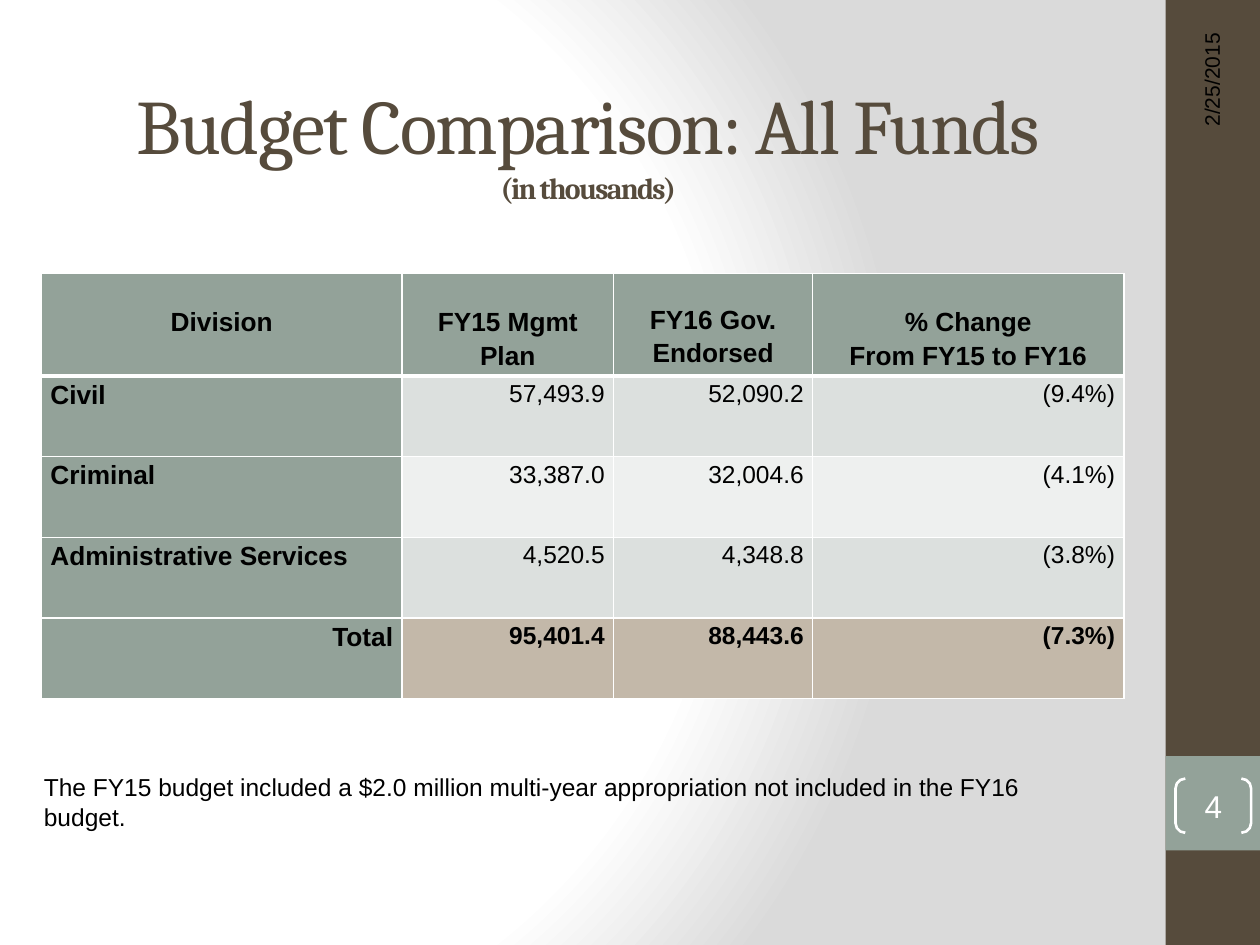
from lxml import etree
from pptx import Presentation
from pptx import util as u
from pptx.dml.color import RGBColor
from pptx.enum import shapes, text
from pptx.oxml import ns

COLORS = {
    "brown": "564B3C", "sage": "93A299", "white": "FFFFFF", "black": "000000",
    "grey": "DADADA", "band": "DCE0DE", "light": "EEF0EF", "tan": "C3B8A9",
}
LEFT, CENTER, RIGHT = text.PP_ALIGN.LEFT, text.PP_ALIGN.CENTER, text.PP_ALIGN.RIGHT
MIDDLE = text.MSO_ANCHOR.MIDDLE


def rgb(name):
    return RGBColor.from_string(COLORS[name])


def sub(parent, tag, **attrs):
    return etree.SubElement(parent, ns.qn(tag), {k: str(v) for k, v in attrs.items()})


def add_run(p, content, size=14, font="Arial", color="black", bold=False, spacing=None):
    r = p.add_run()
    r.text = content
    f = r.font
    f.size, f.name, f.bold = u.Pt(size), font, bold
    f.color.rgb = rgb(color)
    if spacing is not None:
        r._r.get_or_add_rPr().set("spc", str(spacing * 100))


def set_text(tf, content, align=LEFT, line=None, **fmt):
    """Write one paragraph for each line of content."""
    for i, words in enumerate(content.split("\n")):
        p = tf.paragraphs[0] if i == 0 else tf.add_paragraph()
        p.alignment = align
        if line:
            p.line_spacing = line
        add_run(p, words, **fmt)


def set_borders(cell, **widths):
    """Draw white cell borders; widths are points keyed by L, R, T, B."""
    pr = cell._tc.get_or_add_tcPr()
    for i, side in enumerate("LRTB"):
        ln = sub(pr, f"a:ln{side}", w=u.Pt(widths.get(side, 1)))
        sub(sub(ln, "a:solidFill"), "a:srgbClr", val=COLORS["white"])
        pr.insert(i, ln)


class SlideBuilder:
    def __init__(self, prs):
        self.s = prs.slides.add_slide(prs.slide_layouts[6])

    def background(self, stops, focus):
        """Radial gradient; stops are (percent, colour), focus gives edge percents."""
        self.s.background.fill.gradient()
        grad = self.s._element.find(".//" + ns.qn("a:gradFill"))
        for child in list(grad):
            grad.remove(child)
        gs_list = sub(grad, "a:gsLst")
        for pos, color in stops:
            gs = sub(gs_list, "a:gs", pos=pos * 1000)
            sub(gs, "a:srgbClr", val=COLORS[color])
        path = sub(grad, "a:path", path="circle")
        sub(path, "a:fillToRect", **{k: v * 1000 for k, v in focus.items()})

    def shape(self, kind, box, fill=None, line=None):
        sp = self.s.shapes.add_shape(kind, *map(u.Inches, box))
        sp.shadow.inherit = False
        if fill:
            sp.fill.solid()
            sp.fill.fore_color.rgb = rgb(fill)
        else:
            sp.fill.background()
        if line:
            sp.line.color.rgb = rgb(line)
            sp.line.width = u.Pt(1.5)
        else:
            sp.line.fill.background()
        return sp

    def textbox(self, box, content="", rotation=0, anchor=text.MSO_ANCHOR.TOP, **fmt):
        sp = self.s.shapes.add_textbox(*map(u.Inches, box))
        sp.rotation = rotation
        tf = sp.text_frame
        tf.word_wrap = True
        tf.vertical_anchor = anchor
        if content:
            set_text(tf, content, **fmt)
        return tf

    def table(self, left, top, widths, heights):
        frame = self.s.shapes.add_table(
            len(heights), len(widths), u.Inches(left), u.Inches(top),
            u.Inches(sum(widths)), u.Inches(sum(heights)))
        for col, width in zip(frame.table.columns, widths):
            col.width = u.Inches(width)
        for row, height in zip(frame.table.rows, heights):
            row.height = u.Inches(height)
        return frame.table

    def cell(self, cell, content, fill, top=0, borders=None, **fmt):
        cell.margin_left = cell.margin_right = u.Inches(0.07)
        cell.margin_top, cell.margin_bottom = u.Inches(top), 0
        cell.fill.solid()
        cell.fill.fore_color.rgb = rgb(fill)
        set_borders(cell, **(borders or {}))
        set_text(cell.text_frame, content, line=1.15, **fmt)


def add_budget_table(b):
    headers = ["Division", "FY15 Mgmt Plan", "FY16 Gov. Endorsed",
               "% Change\nFrom FY15 to FY16"]
    header_tops = [0.24, 0.24, 0.22, 0.24]
    rows = [
        ("Civil", "57,493.9", "52,090.2", "(9.4%)"),
        ("Criminal", "33,387.0", "32,004.6", "(4.1%)"),
        ("Administrative Services", "4,520.5", "4,348.8", "(3.8%)"),
        ("Total", "95,401.4", "88,443.6", "(7.3%)"),
    ]
    tbl = b.table(0.33, 2.17, [2.86, 1.68, 1.58, 2.47], [0.76] + [0.64] * len(rows))
    for j, (title, top) in enumerate(zip(headers, header_tops)):
        b.cell(tbl.cell(0, j), title, "sage", top=top, borders={"B": 3},
               align=CENTER, size=15, bold=True)
    for i, (division, *values) in enumerate(rows, start=1):
        total = division == "Total"
        borders = {"T": 3} if i == 1 else None
        b.cell(tbl.cell(i, 0), division, "sage", borders=borders,
               align=RIGHT if total else LEFT, size=15, bold=True)
        fill = "tan" if total else "band" if i % 2 else "light"
        for j, value in enumerate(values, start=1):
            b.cell(tbl.cell(i, j), value, fill, borders=borders,
                   align=RIGHT, size=14, bold=total)


def main():
    prs = Presentation()
    prs.slide_width, prs.slide_height = u.Inches(10), u.Inches(7.5)
    b = SlideBuilder(prs)
    b.background([(0, "white"), (75, "white"), (100, "grey")],
                 {"l": 20, "t": 50, "r": 100, "b": 50})

    rect = shapes.MSO_SHAPE.RECTANGLE
    b.shape(rect, (9.25, 0, 0.75, 7.5), fill="brown")
    b.shape(rect, (9.25, 6, 0.75, 0.75), fill="sage")
    b.textbox((8.28, 1.3, 2.67, 0.4), "2/25/2015", rotation=270, anchor=MIDDLE,
              align=RIGHT, size=12)

    number = b.shape(shapes.MSO_SHAPE.DOUBLE_BRACKET, (9.33, 6.18, 0.6, 0.43), line="white")
    number.adjustments[0] = 0.18
    tf = number.text_frame
    tf.margin_left = tf.margin_right = tf.margin_top = tf.margin_bottom = 0
    tf.vertical_anchor = MIDDLE
    set_text(tf, "4", align=CENTER, size=18, color="white")

    p = b.textbox((0.17, 0.5, 9, 1.25), anchor=MIDDLE).paragraphs[0]
    p.alignment = CENTER
    title = {"font": "Cambria", "color": "brown", "spacing": -1}
    add_run(p, "Budget Comparison: All Funds", size=44, **title)
    p.add_line_break()
    add_run(p, "(in thousands)", size=17, bold=True, **title)

    add_budget_table(b)
    b.textbox((0.25, 6.08, 8.33, 0.57),
              "The FY15 budget included a $2.0 million multi-year appropriation "
              "not included in the FY16 budget.", size=14)
    prs.save("out.pptx")


if __name__ == "__main__":
    main()
